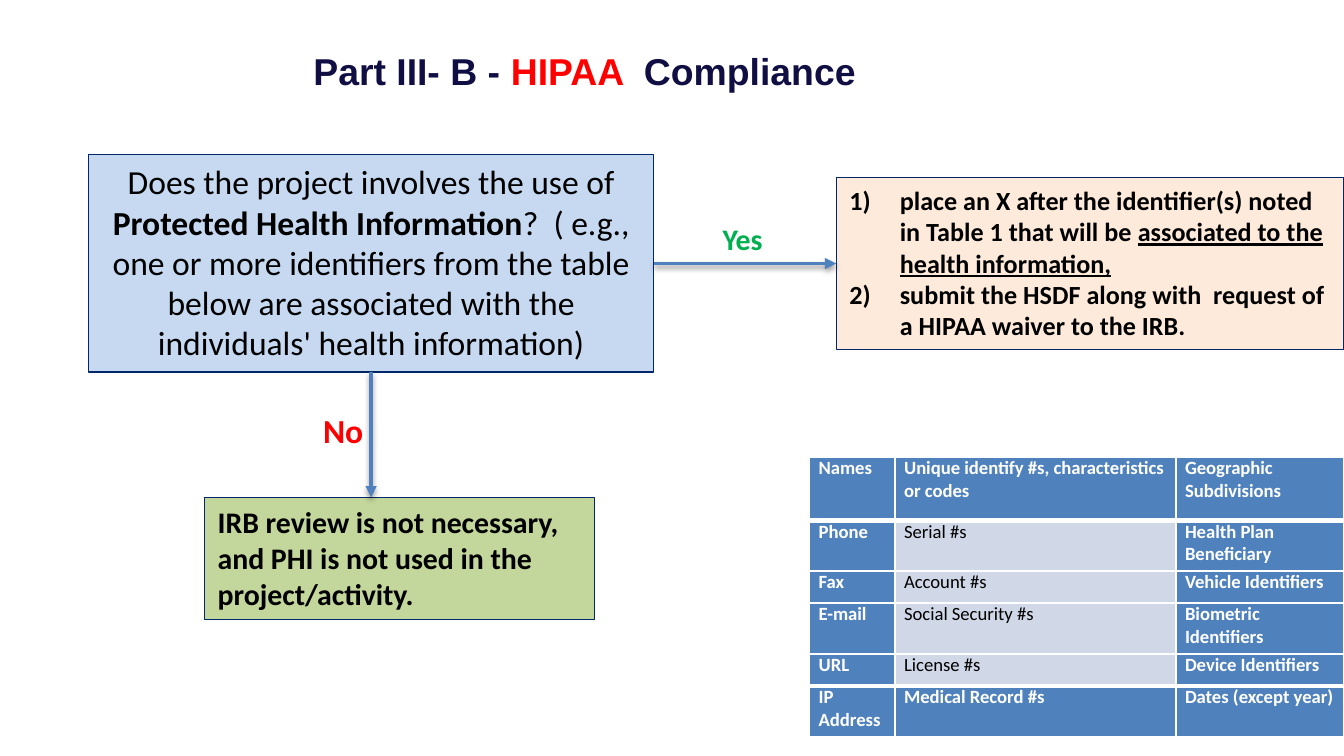
from lxml import etree
from pptx import Presentation
from pptx.dml.color import RGBColor
from pptx.enum.shapes import MSO_CONNECTOR as CONNECTOR, MSO_SHAPE as SHAPE
from pptx.enum.text import MSO_ANCHOR as ANCHOR, PP_ALIGN as ALIGN
from pptx.oxml import parse_xml
from pptx.oxml.ns import nsdecls, qn
from pptx.util import Pt

COLORS = {
    "navy": "100E42", "red": "FF0000", "green": "00B050", "black": "000000",
    "white": "FFFFFF", "outline": "002868", "blue": "4F81BD", "pale": "D0D8E8",
    "question": "C6D9F1", "steps": "FDEADA", "exempt": "C3D69B",
}


def rgb(name):
    return RGBColor.from_string(COLORS[name])


def add_run(paragraph, text, size, color="black", bold=False, font="Calibri"):
    run = paragraph.add_run()
    run.text = text
    run.font.name = font
    run.font.size = Pt(size)
    run.font.bold = bold
    run.font.color.rgb = rgb(color)
    return run


prs = Presentation()
prs.slide_width, prs.slide_height = Pt(720), Pt(405)
slide = prs.slides.add_slide(prs.slide_layouts[5])

# Title
title = slide.shapes.title
title.left, title.top, title.width, title.height = Pt(0), Pt(22.3), Pt(590.4), Pt(39)
title.text_frame.vertical_anchor = ANCHOR.TOP
heading = title.text_frame.paragraphs[0]
heading.alignment = ALIGN.CENTER
heading_props = heading._p.get_or_add_pPr()
heading_props.set("marL", str(Pt(36)))
heading_props.set("indent", "0")
for text, color in [("Part III- B - ", "navy"), ("HIPAA ", "red"), (" Compliance", "navy")]:
    add_run(heading, text, 20, color, True, "Arial")

# Flowchart boxes
frames = {}
for part, left, top, width, height in [
    ("question", 47.5, 82.8, 302.7, 116.5),
    ("steps", 448, 95.2, 272, 92),
    ("exempt", 109.5, 266.5, 209, 65.5),
]:
    box = slide.shapes.add_shape(SHAPE.RECTANGLE, Pt(left), Pt(top), Pt(width), Pt(height))
    box.shadow.inherit = False
    box.fill.solid()
    box.fill.fore_color.rgb = rgb(part)
    box.line.color.rgb = rgb("outline")
    box.line.width = Pt(0.75)
    frames[part] = box.text_frame
    frames[part].word_wrap = True
    frames[part].vertical_anchor = ANCHOR.TOP
    frames[part].paragraphs[0].alignment = ALIGN.LEFT

# Question text
question = frames["question"].paragraphs[0]
question.alignment = ALIGN.CENTER
add_run(question, "Does the project involves the use of ", 18)
add_run(question, "Protected Health Information", 18, bold=True)
add_run(question, "?  ( e.g., one or more identifiers from the table below are "
        "associated with the individuals' health information)", 18)

# Numbered steps
first_step = frames["steps"].paragraphs[0]
second_step = frames["steps"].add_paragraph()
for step in (first_step, second_step):
    step.alignment = ALIGN.LEFT
    step_props = step._p.get_or_add_pPr()
    step_props.set("marL", str(Pt(27)))
    step_props.set("indent", str(-Pt(27)))
    etree.SubElement(step_props, qn("a:buAutoNum"), type="arabicParenR")
add_run(first_step, "place an X after the identifier(s) noted in Table 1 that will be ", 14, bold=True)
add_run(first_step, "associated to the health information,", 14, bold=True).font.underline = True
add_run(second_step, "submit the HSDF along with  request of a HIPAA waiver to the IRB.", 14, bold=True)

# Exempt outcome
add_run(frames["exempt"].paragraphs[0],
        "IRB review is not necessary, and PHI is not used in the project/activity.", 16, bold=True)

# Arrows with a soft shadow
for x1, y1, x2, y2 in [(350.2, 141.2, 448, 141.2), (198.8, 199.3, 198.8, 266.5)]:
    arrow = slide.shapes.add_connector(CONNECTOR.STRAIGHT, Pt(x1), Pt(y1), Pt(x2), Pt(y2))
    arrow.line.color.rgb = rgb("blue")
    arrow.line.width = Pt(2)
    etree.SubElement(arrow.line._get_or_add_ln(), qn("a:tailEnd"), type="triangle")
    arrow._element.spPr.append(parse_xml(
        f'<a:effectLst {nsdecls("a")}><a:outerShdw blurRad="{Pt(3.1)}" dist="{Pt(1.6)}" '
        f'dir="5400000" rotWithShape="0"><a:srgbClr val="{COLORS["black"]}">'
        '<a:alpha val="38000"/></a:srgbClr></a:outerShdw></a:effectLst>'))

# Arrow labels
for answer, left, top, width, height, size, color in [
    ("Yes", 380, 114.5, 53.3, 26.6, 16, "green"),
    ("No", 166, 216, 48.2, 29, 18, "red"),
]:
    label = slide.shapes.add_textbox(Pt(left), Pt(top), Pt(width), Pt(height))
    label.text_frame.word_wrap = True
    add_run(label.text_frame.paragraphs[0], answer, size, color, True)

# Identifier table
identifiers = [
    ("Names", "Unique identify #s, characteristics or codes", "Geographic Subdivisions"),
    ("Phone", "Serial #s", "Health Plan Beneficiary"),
    ("Fax", "Account #s", "Vehicle Identifiers"),
    ("E-mail", "Social Security #s", "Biometric Identifiers"),
    ("URL", "License #s", "Device Identifiers"),
    ("IP Address", "Medical Record #s", "Dates (except year)"),
]
column_widths = [45.8, 150.5, 90]
row_heights = [33.8, 27.2, 17.2, 27.2, 17.2, 27.2]
last = len(identifiers) - 1
table = slide.shapes.add_table(len(identifiers), 3, Pt(433.7), Pt(245),
                               Pt(sum(column_widths)), Pt(sum(row_heights))).table
for column, width in zip(table.columns, column_widths):
    column.width = Pt(width)
for r, (names, height) in enumerate(zip(identifiers, row_heights)):
    table.rows[r].height = Pt(height)
    for c, name in enumerate(names):
        cell = table.cell(r, c)
        cell.margin_left = cell.margin_right = Pt(4.9)
        cell.margin_top = cell.margin_bottom = Pt(0)
        borders = {"L": 1, "R": 1, "T": 3 if r in (1, last) else 1,
                   "B": 3 if r in (0, last - 1) else 1}
        for side, weight in borders.items():
            cell._tc.get_or_add_tcPr().append(parse_xml(
                f'<a:ln{side} {nsdecls("a")} w="{Pt(weight)}"><a:solidFill>'
                f'<a:srgbClr val="{COLORS["white"]}"/></a:solidFill></a:ln{side}>'))
        plain = c == 1 and 0 < r < last
        cell.fill.solid()
        cell.fill.fore_color.rgb = rgb("pale" if plain else "blue")
        add_run(cell.text_frame.paragraphs[0], name, 10, "black" if plain else "white", not plain)

prs.save("out.pptx")
